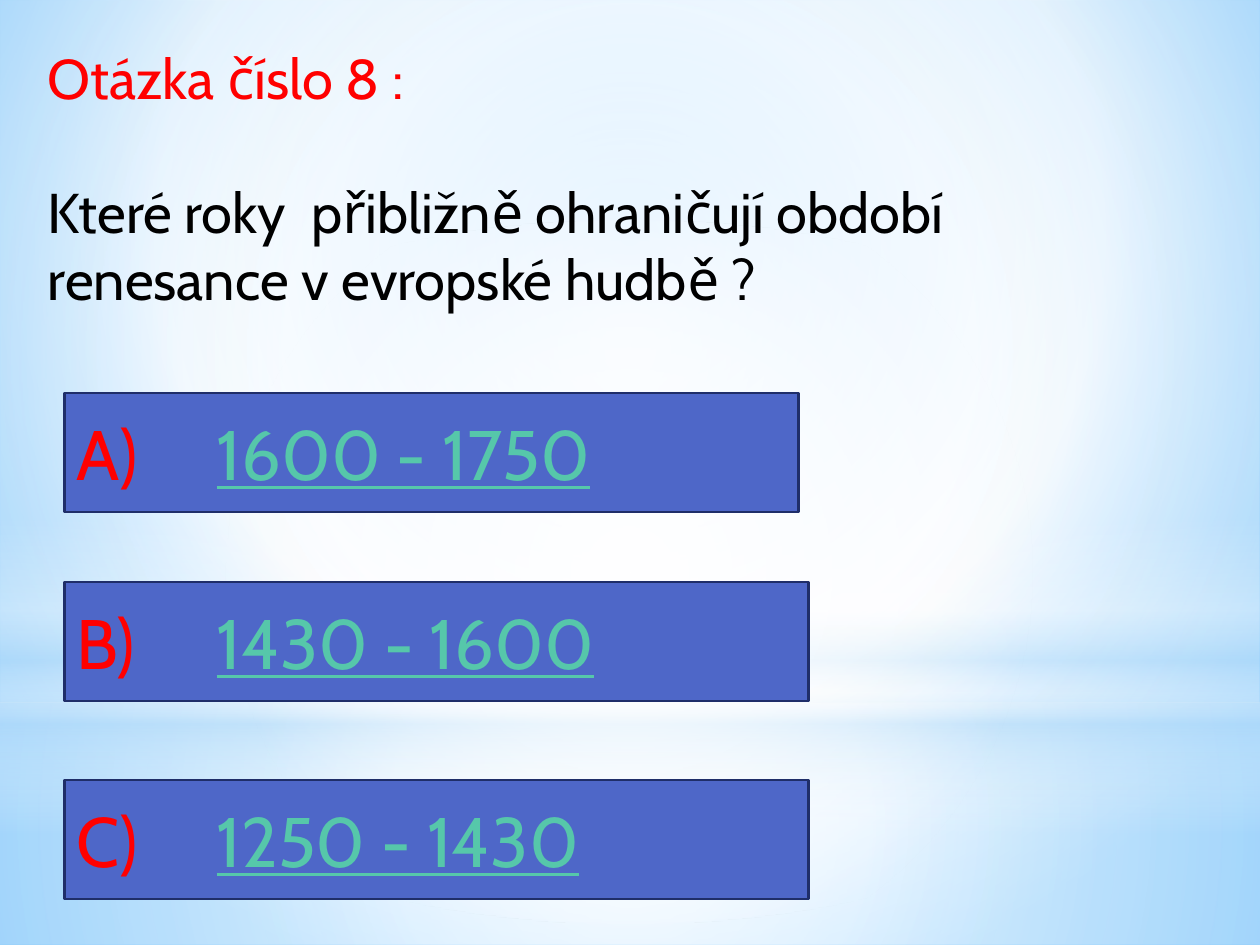
import pptx
import pptx.dml.color
import pptx.enum.shapes
import pptx.enum.text
import pptx.oxml
import pptx.oxml.ns
import pptx.util
from pptx.util import Cm

FONT = "Cabin"
RED, BLACK, GREEN = "FF0000", "000000", "56C7AA"
BOX_FILL, BOX_LINE = "4E67C8", "1F2E69"
WHITE, SKY = "FFFFFF", "B4DCFA"
CENTRE = (50, 50, 50, 50)
NAMESPACE = pptx.oxml.ns.nsdecls("a")


def color(hex_string):
    return pptx.dml.color.RGBColor.from_string(hex_string)


def set_gradient(solid_fill, stops, focus=None):
    """Replace a solid fill by a gradient of (position, colour, opacity) stops.

    With a focus (left, top, right, bottom) it is circular, else vertical.
    """
    stop_xml = "".join(
        f'<a:gs pos="{position * 1000}"><a:srgbClr val="{hex_string}">'
        f'<a:alpha val="{opacity * 1000}"/></a:srgbClr></a:gs>'
        for position, hex_string, opacity in stops
    )
    if focus:
        left, top, right, bottom = (1000 * value for value in focus)
        direction = (
            f'<a:path path="circle"><a:fillToRect l="{left}" t="{top}" '
            f'r="{right}" b="{bottom}"/></a:path>'
        )
    else:
        direction = '<a:lin ang="5400000" scaled="0"/>'
    gradient = pptx.oxml.parse_xml(
        f'<a:gradFill {NAMESPACE} rotWithShape="1">'
        f"<a:gsLst>{stop_xml}</a:gsLst>{direction}</a:gradFill>"
    )
    solid_fill.getparent().replace(solid_fill, gradient)


def set_background(slide):
    slide.background.fill.solid()
    solid_fill = slide._element.find(".//" + pptx.oxml.ns.qn("a:solidFill"))
    stops = [(0, "9ED5FF", 100), (60, WHITE, 100), (100, "5BB9FF", 100)]
    set_gradient(solid_fill, stops, (20, 10, 20, 60))


def add_glow(slide, kind, top, height, stops, focus=None):
    """Add a borderless gradient shape across the whole slide width."""
    shape = slide.shapes.add_shape(kind, 0, top, Cm(25.4), height)
    shape.shadow.inherit = False
    shape.line.fill.background()
    shape.fill.solid()
    solid_fill = shape._element.spPr.find(pptx.oxml.ns.qn("a:solidFill"))
    set_gradient(solid_fill, stops, focus)


def format_run(run, size, hex_string, underline=False):
    run.font.name = FONT
    run.font.size = pptx.util.Pt(size)
    run.font.color.rgb = color(hex_string)
    if underline:
        run.font.underline = True


def write_question(slide, number, question):
    title = slide.shapes.title
    title.left, title.top = Cm(0.71), Cm(0.74)
    title.width, title.height = Cm(24), Cm(5.74)
    slide.shapes._spTree.append(title._element)  # in front of the glows
    frame = title.text_frame
    frame.word_wrap = True
    frame.auto_size = pptx.enum.text.MSO_AUTO_SIZE.NONE
    frame.vertical_anchor = pptx.enum.text.MSO_ANCHOR.TOP
    frame.text = f"{number}\n{question}"
    for paragraph, hex_string in zip(frame.paragraphs, (RED, BLACK)):
        paragraph.alignment = pptx.enum.text.PP_ALIGN.LEFT
        for run in paragraph.runs:
            format_run(run, 32, hex_string)
    frame.paragraphs[0].space_after = pptx.util.Pt(38.5)


def add_answer(slide, top, width, letter, years):
    box = slide.shapes.add_shape(
        pptx.enum.shapes.MSO_SHAPE.RECTANGLE, Cm(1.3), top, width, Cm(2.4)
    )
    box.shadow.inherit = False
    box.fill.solid()
    box.fill.fore_color.rgb = color(BOX_FILL)
    box.line.color.rgb = color(BOX_LINE)
    box.line.width = pptx.util.Pt(1.25)
    box.text_frame.vertical_anchor = pptx.enum.text.MSO_ANCHOR.MIDDLE
    paragraph = box.text_frame.paragraphs[0]
    paragraph.alignment = pptx.enum.text.PP_ALIGN.LEFT
    # The years start at a tab stop
    paragraph._p.get_or_add_pPr().append(pptx.oxml.parse_xml(
        f'<a:tabLst {NAMESPACE}><a:tab pos="{Cm(2.82)}" algn="l"/></a:tabLst>'
    ))
    for text, hex_string, underline in (
        (f"{letter})\t", RED, False),
        (years, GREEN, True),
    ):
        run = paragraph.add_run()
        run.text = text
        format_run(run, 40, hex_string, underline)


def main():
    presentation = pptx.Presentation()
    presentation.slide_width, presentation.slide_height = Cm(25.4), Cm(19.05)
    slide = presentation.slides.add_slide(presentation.slide_layouts[5])

    # Backdrop: floor, sky, horizon and central light
    set_background(slide)
    rectangle = pptx.enum.shapes.MSO_SHAPE.RECTANGLE
    oval = pptx.enum.shapes.MSO_SHAPE.OVAL
    add_glow(slide, rectangle, Cm(14.17), Cm(4.88),
             [(0, WHITE, 91), (37, WHITE, 76), (100, SKY, 79)], CENTRE)
    add_glow(slide, rectangle, Cm(0), Cm(14.17),
             [(0, WHITE, 89), (48, WHITE, 62), (100, SKY, 79)], CENTRE)
    add_glow(slide, rectangle, Cm(10.46), Cm(6.35),
             [(0, WHITE, 0), (29, WHITE, 30), (45, SKY, 40),
              (55, WHITE, 26), (65, SKY, 60), (100, WHITE, 0)])
    add_glow(slide, oval, Cm(4.45), Cm(14.17),
             [(0, WHITE, 100), (56, WHITE, 0)], CENTRE)

    # Question and the three answers
    write_question(
        slide, "Otázka číslo 8 :",
        "Které roky  přibližně ohraničují období\vrenesance v evropské hudbě ?",
    )
    for top, width, letter, years in (
        (7.92, 14.8, "A", "1600 - 1750"),
        (11.73, 15, "B", "1430 - 1600"),
        (15.72, 15, "C", "1250 - 1430"),
    ):
        add_answer(slide, Cm(top), Cm(width), letter, years)

    presentation.save("out.pptx")


if __name__ == "__main__":
    main()
